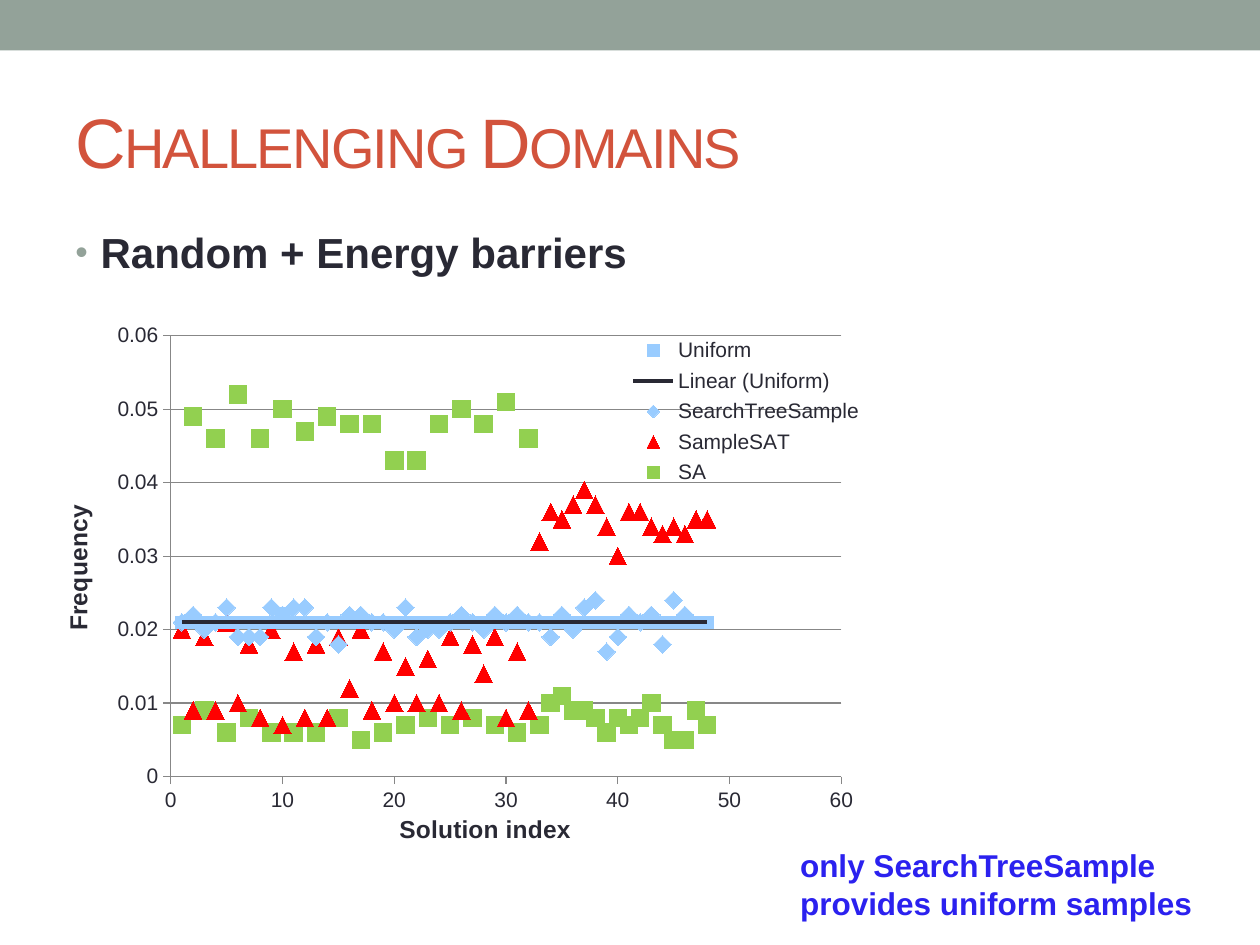
from lxml import etree
from pptx import Presentation
from pptx.chart.data import XyChartData
from pptx.dml.color import RGBColor
from pptx.enum.chart import (XL_CHART_TYPE as ChartType, XL_LEGEND_POSITION as LegendPosition,
                             XL_MARKER_STYLE as Marker, XL_TICK_MARK as TickMark)
from pptx.enum.shapes import MSO_SHAPE as Shape
from pptx.enum.text import MSO_ANCHOR as Anchor, MSO_AUTO_SIZE as AutoSize
from pptx.oxml import parse_xml
from pptx.oxml.ns import nsdecls, qn
from pptx.util import Cm, Pt

FONT = "Arial"
DARK, SAGE, RUST, BLUE = "292934", "93A299", "D2533C", "2B21EF"
SKY, RED, GREEN, GRAY = "99CCFF", "FF0000", "92D050", "878787"

# Frequencies in thousandths, for solutions 1, 2, 3, ...
SEARCH_TREE = [21, 22, 20, 21, 23, 19, 19, 19, 23, 22, 23, 23, 19, 21, 18, 22,
               22, 21, 21, 20, 23, 19, 20, 20, 21, 22, 21, 20, 22, 21, 22, 21,
               21, 19, 22, 20, 23, 24, 17, 19, 22, 21, 22, 18, 24, 22]
SAMPLE_SAT = [20, 9, 19, 9, 21, 10, 18, 8, 20, 7, 17, 8, 18, 8, 19, 12,
              20, 9, 17, 10, 15, 10, 16, 10, 19, 9, 18, 14, 19, 8, 17, 9,
              32, 36, 35, 37, 39, 37, 34, 30, 36, 36, 34, 33, 34, 33, 35, 35]
ANNEALING = [7, 49, 9, 46, 6, 52, 8, 46, 6, 50, 6, 47, 6, 49, 8, 48,
             5, 48, 6, 43, 7, 43, 8, 48, 7, 50, 8, 48, 7, 51, 6, 46,
             7, 10, 11, 9, 9, 8, 6, 8, 7, 8, 10, 7, 5, 5, 9, 7]
SERIES = [  # name, values, marker style, marker size, colour
    ("Uniform", [21] * 48, Marker.SQUARE, 7, SKY),
    ("SearchTreeSample", SEARCH_TREE, Marker.DIAMOND, 10, SKY),
    ("SampleSAT", SAMPLE_SAT, Marker.TRIANGLE, 10, RED),
    ("SA", ANNEALING, Marker.SQUARE, 10, GREEN),
]


def color(value):
    return RGBColor.from_string(value)


def style_font(font, size, fill=DARK, bold=False):
    font.name = FONT
    font.size = Pt(size)
    font.bold = bold
    font.color.rgb = color(fill)


def add_band(page, left, top, width, height, fill):
    band = page.shapes.add_shape(Shape.RECTANGLE, left, top, width, height)
    band.shadow.inherit = False
    band.fill.solid()
    band.fill.fore_color.rgb = color(fill)
    band.line.fill.background()


def add_text(page, text, left, top, width, height, size, fill=DARK, bold=False,
             anchor=Anchor.TOP, grow=False, bullet=None, small_caps=False, spacing=0):
    box = page.shapes.add_textbox(left, top, width, height)
    frame = box.text_frame
    frame.word_wrap = True
    frame.vertical_anchor = anchor
    frame.auto_size = AutoSize.SHAPE_TO_FIT_TEXT if grow else AutoSize.NONE
    para = frame.paragraphs[0]
    if bullet:
        add_bullet(para, bullet)
    span = para.add_run()
    span.text = text
    style_font(span.font, size, fill, bold)
    properties = span.font._element
    if small_caps:
        properties.set("cap", "small")
    if spacing:
        properties.set("spc", str(spacing * 100))


def add_bullet(para, fill):
    properties = para._p.get_or_add_pPr()
    properties.set("marL", str(Cm(0.51)))
    properties.set("indent", str(-Cm(0.51)))
    bullet_color = etree.SubElement(properties, qn("a:buClr"))
    etree.SubElement(bullet_color, qn("a:srgbClr"), val=fill)
    etree.SubElement(properties, qn("a:buSzPct"), val="85000")
    etree.SubElement(properties, qn("a:buFont"), typeface=FONT)
    etree.SubElement(properties, qn("a:buChar"), char="•")


def set_layout(element, index, x, y, w, h, inner=False):
    """Place a plot area or legend by fractions of the chart."""
    for old in element.findall(qn("c:layout")):
        element.remove(old)
    target = '<c:layoutTarget val="inner"/>' if inner else ""
    element.insert(index, parse_xml(
        f'<c:layout {nsdecls("c")}><c:manualLayout>{target}'
        '<c:xMode val="edge"/><c:yMode val="edge"/>'
        f'<c:x val="{x}"/><c:y val="{y}"/><c:w val="{w}"/><c:h val="{h}"/>'
        '</c:manualLayout></c:layout>'))


def add_trend_line(series, fill, width):
    trend = parse_xml(
        f'<c:trendline {nsdecls("c", "a")}><c:spPr><a:ln w="{Pt(width)}"><a:solidFill>'
        f'<a:srgbClr val="{fill}"/></a:solidFill></a:ln></c:spPr>'
        '<c:trendlineType val="linear"/><c:dispRSqr val="0"/><c:dispEq val="0"/>'
        '</c:trendline>')
    series._element.find(qn("c:xVal")).addprevious(trend)


def style_axis(axis, title, maximum, step, grid=False, rotation=0):
    axis.minimum_scale, axis.maximum_scale, axis.major_unit = 0, maximum, step
    axis.major_tick_mark = TickMark.OUTSIDE
    axis.minor_tick_mark = TickMark.NONE
    axis.has_major_gridlines = grid
    lines = [axis.format.line]
    if grid:
        lines.append(axis.major_gridlines.format.line)
    for line in lines:
        line.color.rgb = color(GRAY)
        line.width = Pt(0.75)
    style_font(axis.tick_labels.font, 12)
    axis.tick_labels.number_format = "General"
    axis.tick_labels.number_format_is_linked = False
    para = axis.axis_title.text_frame.paragraphs[0]
    span = para.add_run()
    span.text = title
    style_font(span.font, 14, bold=True)
    body = axis.axis_title._element.xpath(".//a:bodyPr")[0]
    body.set("rot", str(rotation * 60000))
    body.set("vert", "horz")


def add_scatter(page, left, top, width, height):
    data = XyChartData()
    for name, values, *_ in SERIES:
        points = data.add_series(name)
        for index, value in enumerate(values, 1):
            points.add_data_point(index, value / 1000)
    chart = page.shapes.add_chart(ChartType.XY_SCATTER, left, top, width, height, data).chart
    chart.has_title = False
    style_font(chart.font, 10)
    plot = chart.plots[0]
    plot.vary_by_categories = False

    # Markers without joining lines
    for series, (_, _, style, size, fill) in zip(plot.series, SERIES):
        series.format.line.fill.background()
        series.marker.style = style
        series.marker.size = size
        series.marker.format.fill.solid()
        series.marker.format.fill.fore_color.rgb = color(fill)
        series.marker.format.line.fill.background()
    add_trend_line(plot.series[0], DARK, 2.25)

    # Axes
    style_axis(chart.category_axis, "Solution index", 60, 10)
    style_axis(chart.value_axis, "Frequency", 0.06, 0.01, grid=True, rotation=-90)

    # Legend over the plot area
    chart.has_legend = True
    legend = chart.legend
    legend.position = LegendPosition.RIGHT
    legend.include_in_layout = True
    style_font(legend.font, 12)
    set_layout(legend._element, 1, 0.66, 0.03, 0.27, 0.3)
    plot_area = chart._chartSpace.chart.plotArea
    set_layout(plot_area, 0, 0.135, 0.039, 0.769, 0.823, inner=True)


def main():
    deck = Presentation()
    deck.slide_width, deck.slide_height = Cm(25.4), Cm(19.05)
    page = deck.slides.add_slide(deck.slide_layouts[6])

    # Top band, title and bullet
    add_band(page, 0, 0, deck.slide_width, Cm(1.02), SAGE)
    add_text(page, "Challenging Domains", Cm(1.27), Cm(1.47), Cm(22.86), Cm(2.74), 40,
             fill=RUST, anchor=Anchor.MIDDLE, small_caps=True, spacing=-1)
    add_text(page, "Random + Energy barriers", Cm(1.27), Cm(4.45), Cm(22.86), Cm(13.54), 24,
             bold=True, bullet=SAGE)

    # Chart and conclusion
    add_scatter(page, Cm(1.07), Cm(6.35), Cm(17.58), Cm(10.8))
    add_text(page, "only SearchTreeSample provides uniform samples",
             Cm(15.88), Cm(16.94), Cm(9.09), Cm(1.8), 18, fill=BLUE, bold=True, grow=True)
    deck.save("out.pptx")


if __name__ == "__main__":
    main()
